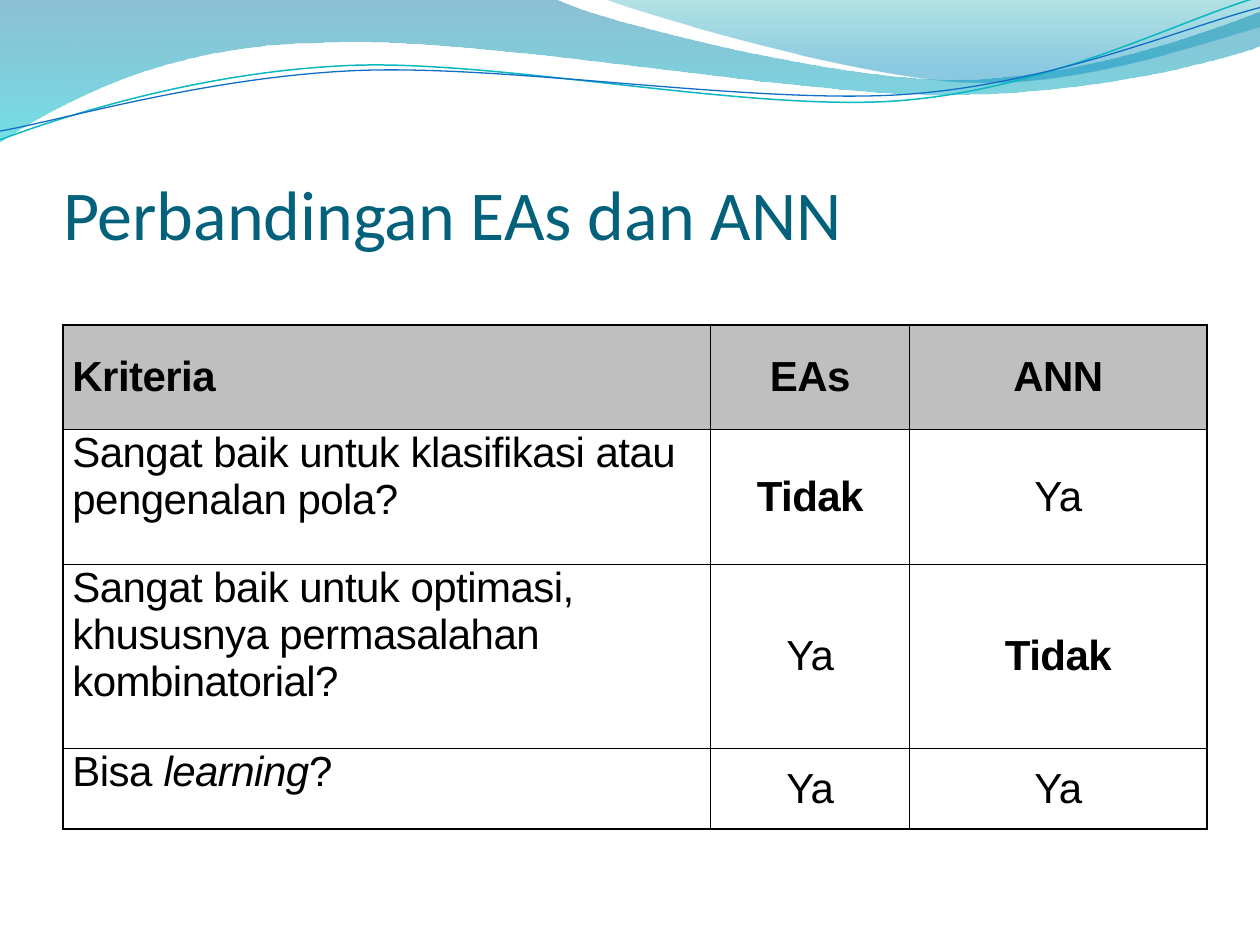
from math import cos, radians, sin

from lxml.etree import SubElement
from pptx import Presentation
from pptx.dml.color import RGBColor
from pptx.enum.text import MSO_ANCHOR, PP_ALIGN
from pptx.oxml.ns import qn
from pptx.util import Pt

PX = 9144
CURVE_TILT = -2.7
TITLE_TEAL = RGBColor(0x04, 0x61, 0x7B)
BLACK = RGBColor(0x00, 0x00, 0x00)
HEADER_GREY = RGBColor(0xBF, 0xBF, 0xBF)
DEEP_BLUE = RGBColor(0x00, 0x74, 0xA1)
CYAN = RGBColor(0x00, 0xC6, 0xCF)
TEAL = RGBColor(0x00, 0xA1, 0xA9)
SKY_BLUE = RGBColor(0x00, 0x8B, 0xBF)
LINE_TEAL = RGBColor(0x0A, 0xB8, 0xBF)
LINE_BLUE = RGBColor(0x0F, 0x6F, 0xC6)

LEFT_WAVE = [
    [(0, -1)], [(440, -1)], [(476, 17), (664, 63), (758, 63)],
    [(853, 63), (958, 26), (1000, 9)], [(1001, 36)],
    [(983, 44), (870, 76), (746, 75)], [(622, 75), (382, 28), (257, 34)],
    [(129, 35), (46, 83), (-1, 113)],
]
RIGHT_WAVE = [
    [(479, -1)], [(509, 11), (682, 62), (769, 65)],
    [(856, 69), (961, 32), (1000, 21)], [(1000, 0)],
]
TEAL_CURVE = [
    [(0, 111)], [(48, 93), (158, 57), (277, 52)],
    [(395, 47), (593, 89), (713, 80)], [(833, 71), (938, 15), (998, -2)],
]
BLUE_CURVE = [
    [(0, 104)], [(47, 96), (164, 61), (283, 56)],
    [(403, 51), (597, 83), (717, 75)], [(836, 67), (941, 21), (1000, 6)],
]

COLUMNS = [514, 158, 236]
ROWS = [83, 107, 146, 64]
CELLS = [
    ["Kriteria", "EAs", "ANN"],
    ["Sangat baik untuk klasifikasi atau pengenalan pola?", "Tidak", "Ya"],
    ["Sangat baik untuk optimasi, khususnya permasalahan kombinatorial?", "Ya", "Tidak"],
    [("Bisa ", "learning", "?"), "Ya", "Ya"],
]


def write(p, text, font="Arial", size=24, color=BLACK, bold=False, italic=False, spacing=0):
    r = p.add_run()
    r.text = text
    r.font.name = font
    r.font.size = Pt(size)
    r.font.color.rgb = color
    r.font.bold = bold
    r.font.italic = italic
    if spacing:
        r.font._element.set("spc", str(spacing))


def turn(point, center, degrees):
    angle = radians(degrees)
    dx, dy = point[0] - center[0], point[1] - center[1]
    return (center[0] + dx * cos(angle) - dy * sin(angle),
            center[1] + dx * sin(angle) + dy * cos(angle))


class Deck:
    def __init__(self):
        self.prs = Presentation()
        self.prs.slide_width = 1000 * PX
        self.prs.slide_height = 750 * PX
        self.s = self.prs.slides.add_slide(self.prs.slide_layouts[6])

    def freeform(self, path, closed):
        path = [[(round(x * PX), round(y * PX)) for x, y in part] for part in path]
        anchors = [part[-1] for part in path]
        builder = self.s.shapes.build_freeform(*anchors[0])
        builder.add_line_segments(anchors[1:], close=closed)
        sp = builder.convert_to_shape()
        sp.shadow.inherit = False
        left, top = (min(values) for values in zip(*anchors))
        lines = list(sp._element.iter(qn("a:lnTo")))
        for line, part in zip(lines, path[1:]):
            if len(part) == 3:
                line.tag = qn("a:cubicBezTo")
                line.clear()
                for x, y in part:
                    SubElement(line, qn("a:pt"), x=str(x - left), y=str(y - top))
        return sp

    def wave(self, path, stops):
        sp = self.freeform(path, True)
        sp.line.fill.background()
        sp.fill.gradient()
        sp.fill.gradient_angle = 270
        for stop, (position, color, _) in zip(sp.fill.gradient_stops, stops):
            stop.position = position
            stop.color.rgb = color
        colors = sp._element.spPr.iter(qn("a:srgbClr"))
        for element, (_, _, opacity) in zip(colors, stops):
            SubElement(element, qn("a:alpha"), val=str(opacity * 1000))

    def curve(self, path, center, color, width):
        level = [[turn(point, center, -CURVE_TILT) for point in part] for part in path]
        sp = self.freeform(level, False)
        sp.rotation = CURVE_TILT
        sp.fill.background()
        sp.line.color.rgb = color
        sp.line.width = Pt(width)

    def title(self, text, x, y, w, h):
        tf = self.s.shapes.add_textbox(x * PX, y * PX, w * PX, h * PX).text_frame
        tf.word_wrap = True
        tf.vertical_anchor = MSO_ANCHOR.BOTTOM
        tf.margin_left = tf.margin_right = tf.margin_bottom = 0
        tf.margin_top = 5 * PX
        write(tf.paragraphs[0], text, font="Calibri", size=40, color=TITLE_TEAL)

    def table(self, x, y):
        frame = self.s.shapes.add_table(
            len(ROWS), len(COLUMNS), x * PX, y * PX, sum(COLUMNS) * PX, sum(ROWS) * PX
        )
        table = frame.table
        table.first_row = table.horz_banding = False
        for column, width in zip(table.columns, COLUMNS):
            column.width = width * PX
        for row, height in zip(table.rows, ROWS):
            row.height = height * PX
        for i, row in enumerate(CELLS):
            for j, content in enumerate(row):
                self.cell(table.cell(i, j), content, header=i == 0, label=j == 0)

    def cell(self, cell, content, header, label):
        cell.margin_left = cell.margin_right = Pt(5.4)
        cell.margin_top = cell.margin_bottom = 0
        cell.vertical_anchor = MSO_ANCHOR.TOP if label and not header else MSO_ANCHOR.MIDDLE
        self.borders(cell)
        if header:
            cell.fill.solid()
            cell.fill.fore_color.rgb = HEADER_GREY
        else:
            cell.fill.background()
        p = cell.text_frame.paragraphs[0]
        p.alignment = PP_ALIGN.LEFT if label else PP_ALIGN.CENTER
        p.space_before = Pt(3)
        p.space_after = Pt(6)
        for text in [content] if isinstance(content, str) else content:
            write(p, text, bold=header or text == "Tidak",
                  italic=text == "learning", spacing=-30)

    def borders(self, cell):
        tc_pr = cell._tc.get_or_add_tcPr()
        for side in ("lnL", "lnR", "lnT", "lnB"):
            line = SubElement(tc_pr, qn(f"a:{side}"), w=str(Pt(1)))
            fill = SubElement(line, qn("a:solidFill"))
            SubElement(fill, qn("a:srgbClr"), val=str(BLACK))


def main():
    deck = Deck()
    deck.wave(LEFT_WAVE, [(0, DEEP_BLUE, 45), (1, CYAN, 55)])
    deck.wave(RIGHT_WAVE, [(0, TEAL, 30), (0.8, SKY_BLUE, 45)])
    deck.curve(TEAL_CURVE, (499, 57), LINE_TEAL, 0.85)
    deck.curve(BLUE_CURVE, (499, 59), LINE_BLUE, 0.75)
    deck.title("Perbandingan EAs dan ANN", 50, 77, 908, 125)
    deck.table(50, 258)
    deck.prs.save("out.pptx")


if __name__ == "__main__":
    main()
